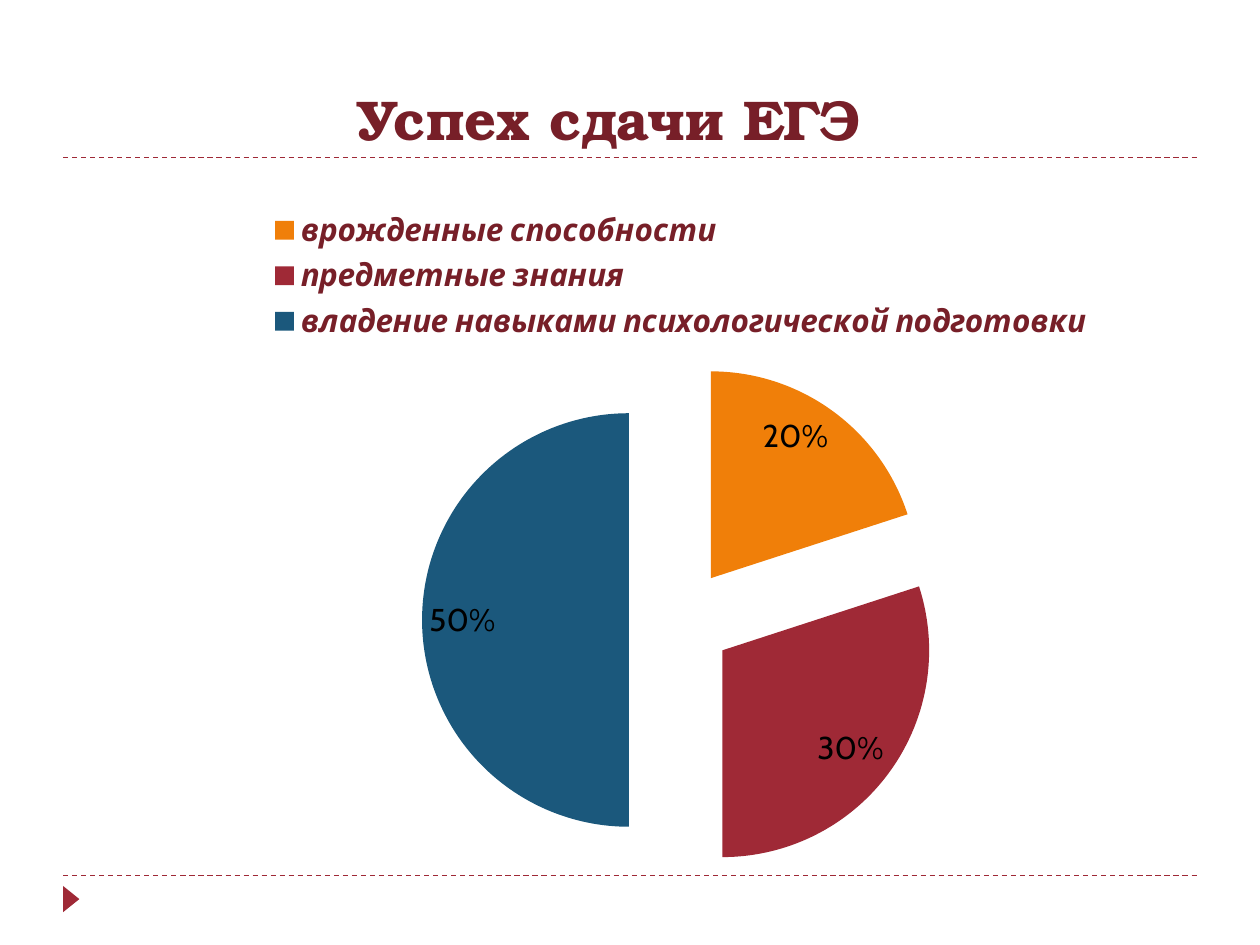
import lxml.etree
import pptx
import pptx.chart.data
import pptx.dml.color
import pptx.enum.chart
import pptx.enum.dml
import pptx.enum.shapes
import pptx.enum.text
import pptx.oxml
import pptx.oxml.ns
import pptx.util

Cm, Pt = pptx.util.Cm, pptx.util.Pt
qn = pptx.oxml.ns.qn

# Content
TITLE = "Успех сдачи ЕГЭ"
FACTORS = [  # name, share in percent, slice colour
    ("врожденные способности", 20, "F07F09"),
    ("предметные знания", 30, "9F2936"),
    ("владение навыками психологической подготовки", 50, "1B587C"),
]
EXPLOSION = 25
RULE_HEIGHTS = [17.65, 3.18]

# Fractions of the chart frame: left, top, width, height
LEGEND_BOX = (0.13, 0.012, 0.74, 0.205)
PIE_BOX = (0.322, 0.31, 0.356, 0.59)

THEME = {
    "accent": "9F2936",
    "heading": "771F28",
    "label": "000000",
    "title_font": {"name": "TeX Gyre Bonum", "size": Pt(32), "bold": True},
    "chart_font": {"name": "Cabin", "size": Pt(18)},
    "legend_font": {"name": "Cabin", "size": Pt(18), "bold": True, "italic": True},
}


def rgb(value):
    return pptx.dml.color.RGBColor.from_string(value)


def apply(target, values):
    for name, value in values.items():
        setattr(target, name, value)


def style_font(font, values, colour):
    apply(font, values)
    font.color.rgb = rgb(colour)


def set_layout(parent, before, box, inner=False):
    """Fix a chart part in place, just ahead of the named child."""
    for old in parent.findall(qn("c:layout")):
        parent.remove(old)
    layout = lxml.etree.Element(qn("c:layout"))
    manual = lxml.etree.SubElement(layout, qn("c:manualLayout"))
    settings = [("layoutTarget", "inner")] if inner else []
    settings += [("xMode", "edge"), ("yMode", "edge")]
    settings += [(key, str(part)) for key, part in zip("xywh", box)]
    for tag, value in settings:
        lxml.etree.SubElement(manual, qn("c:" + tag)).set("val", value)
    parent.find(qn(before)).addprevious(layout)


def add_rule(slide, top):
    rule = slide.shapes.add_connector(
        pptx.enum.shapes.MSO_CONNECTOR.STRAIGHT, Cm(1.27), Cm(top), Cm(24.13), Cm(top))
    rule.line.color.rgb = rgb(THEME["accent"])
    apply(rule.line, {"width": Pt(0.75), "dash_style": pptx.enum.dml.MSO_LINE.DASH})
    lxml.etree.SubElement(rule._element.spPr, qn("a:effectLst"))


def add_marker(slide):
    marker = slide.shapes.add_shape(
        pptx.enum.shapes.MSO_SHAPE.ISOSCELES_TRIANGLE, Cm(1.17), Cm(17.96), Cm(0.53), Cm(0.33))
    marker.rotation = 90
    marker.shadow.inherit = False
    marker.fill.solid()
    marker.fill.fore_color.rgb = rgb(THEME["accent"])
    marker.line.fill.background()


def add_title(slide):
    heading = slide.shapes.add_textbox(Cm(1.27), Cm(0.44), Cm(22.02), Cm(2.74)).text_frame
    apply(heading, {"word_wrap": True, "vertical_anchor": pptx.enum.text.MSO_ANCHOR.BOTTOM})
    line = heading.paragraphs[0]
    line.alignment = pptx.enum.text.PP_ALIGN.CENTER
    run = line.add_run()
    run.text = TITLE
    style_font(run.font, THEME["title_font"], THEME["heading"])


def add_pie(slide):
    shares = pptx.chart.data.CategoryChartData(number_format="General")
    shares.categories = [name for name, _, _ in FACTORS]
    shares.add_series("Series 1", [share for _, share, _ in FACTORS])
    chart = slide.shapes.add_chart(
        pptx.enum.chart.XL_CHART_TYPE.PIE, Cm(2.01), Cm(3.94), Cm(23.42), Cm(14.15), shares).chart
    apply(chart, {"has_title": False, "has_legend": True})
    style_font(chart.font, THEME["chart_font"], THEME["label"])

    # Legend
    apply(chart.legend, {"position": pptx.enum.chart.XL_LEGEND_POSITION.TOP,
                         "include_in_layout": False})
    style_font(chart.legend.font, THEME["legend_font"], THEME["heading"])
    set_layout(chart.legend._element, "c:overlay", LEGEND_BOX)

    # Slices
    pie = chart.plots[0]
    pie.vary_by_categories = True
    series = pie.series[0]
    for index, (_, _, colour) in enumerate(FACTORS):
        fill = series.points[index].format.fill
        fill.solid()
        fill.fore_color.rgb = rgb(colour)
    for point in series._element.findall(qn("c:dPt")):
        explosion = lxml.etree.Element(qn("c:explosion"))
        explosion.set("val", str(EXPLOSION))
        point.find(qn("c:spPr")).addprevious(explosion)
    set_layout(pie._element.getparent(), "c:pieChart", PIE_BOX, inner=True)

    # Percentages
    labels = series.data_labels
    apply(labels, {
        "show_percentage": True,
        "show_value": False,
        "number_format": "0%",
        "number_format_is_linked": False,
        "position": pptx.enum.chart.XL_LABEL_POSITION.INSIDE_END,
    })
    style_font(labels.font, THEME["chart_font"], THEME["label"])


def main():
    deck = pptx.Presentation()
    apply(deck, {"slide_width": Cm(25.4), "slide_height": Cm(19.05)})
    slide = deck.slides.add_slide(deck.slide_layouts[6])
    for top in RULE_HEIGHTS:
        add_rule(slide, top)
    add_marker(slide)
    add_title(slide)
    add_pie(slide)
    deck.save("out.pptx")


if __name__ == "__main__":
    main()
